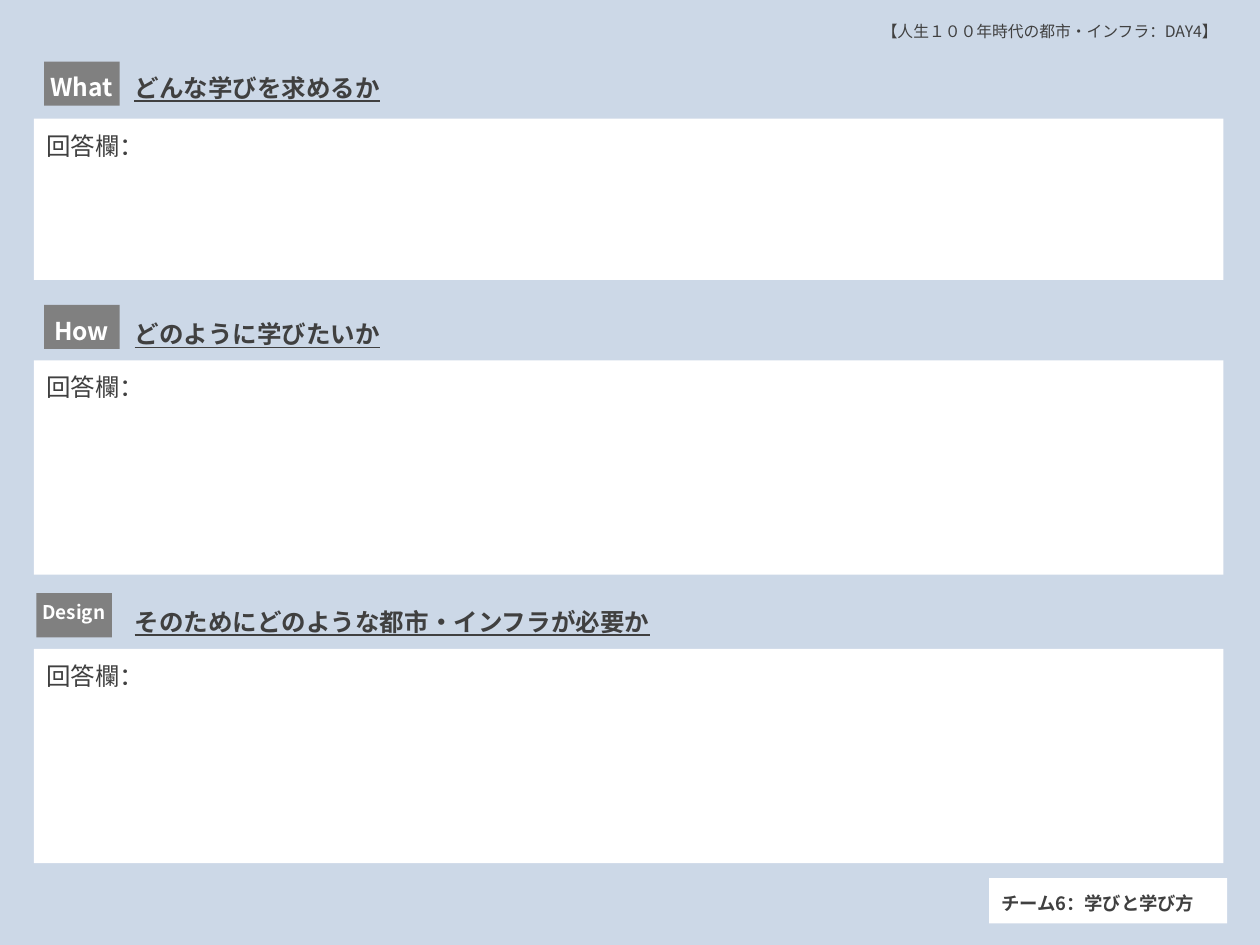
from lxml import etree
from pptx import Presentation
from pptx.dml.color import RGBColor
from pptx.enum import shapes, text
from pptx.oxml.ns import qn
from pptx.util import Pt

FONT = "Noto Sans CJK JP"
COLORS = {"bg": "CCD8E7", "ink": "404040", "badge": "808080", "white": "FFFFFF"}


def add_rect(parent, x, y, w, h, color):
    sp = parent.add_shape(shapes.MSO_SHAPE.RECTANGLE, Pt(x), Pt(y), Pt(w), Pt(h))
    sp.shadow.inherit = False
    sp.fill.solid()
    sp.fill.fore_color.rgb = RGBColor.from_string(COLORS[color])
    sp.line.fill.background()
    return sp


def write(sp, words, size, color="ink", bold=False, underline=False,
          align=text.PP_ALIGN.LEFT, spacing=1.2, anchor=text.MSO_ANCHOR.TOP):
    tf = sp.text_frame
    tf.word_wrap = True
    tf.vertical_anchor = anchor
    p = tf.paragraphs[0]
    p.alignment = align
    p.line_spacing = spacing
    r = p.add_run()
    r.text = words
    r.font.name = FONT
    r.font.size = Pt(size)
    r.font.bold = bold
    r.font.underline = underline
    r.font.color.rgb = RGBColor.from_string(COLORS[color])
    # East Asian typeface, placed right after the Latin one
    ea = etree.Element(qn("a:ea"), typeface=FONT)
    r.font._element.find(qn("a:latin")).addnext(ea)


prs = Presentation()
prs.slide_width, prs.slide_height = Pt(720), Pt(540)
s = prs.slides.add_slide(prs.slide_layouts[6])
s.background.fill.solid()
s.background.fill.fore_color.rgb = RGBColor.from_string(COLORS["bg"])

# Course name at the top right
sp = s.shapes.add_textbox(Pt(496.8), Pt(6.5), Pt(223.2), Pt(26))
write(sp, "【人生１００年時代の都市・インフラ：DAY4】", 9)

# Sections: label, size, spacing, badge x, badge y, label drop,
# question, question y, question width, answer y, answer height
sections = [
    ("What", 14, 1.1, 25.2, 35.2, 0.8,
     "どんな学びを求めるか", 34.6, 403.2, 67.8, 92.2),
    ("How", 14, 1.1, 25.2, 174.2, 1.4,
     "どのように学びたいか", 175.6, 603.4, 206, 122.4),
    ("Design", 10.8, 1.0, 20.8, 339, 0.8,
     "そのためにどのような都市・インフラが必要か", 339.8, 603.4, 370.8, 122.4),
]
for (label, size, spacing, badge_x, badge_y, drop,
     question, question_y, question_w, answer_y, answer_h) in sections:
    # Question
    sp = s.shapes.add_textbox(Pt(69.8), Pt(question_y), Pt(question_w), Pt(32.4))
    write(sp, question, 14, bold=True, underline=True)

    # Answer box
    sp = add_rect(s.shapes, 19.4, answer_y, 679.7, answer_h, "white")
    write(sp, "回答欄：", 14)

    # Badge with its label
    badge = s.shapes.add_group_shape().shapes
    add_rect(badge, badge_x, badge_y, 43.2, 25.2, "badge")
    sp = badge.add_textbox(Pt(badge_x - 5.6), Pt(badge_y + drop), Pt(54), Pt(25.2))
    write(sp, label, size, "white", bold=True,
          align=text.PP_ALIGN.CENTER, spacing=spacing)

# Team name at the bottom right
sp = add_rect(s.shapes, 565.2, 501.8, 136.1, 25.9, "white")
write(sp, "チーム6：学びと学び方", 10.5, bold=True, anchor=text.MSO_ANCHOR.MIDDLE)

prs.save("out.pptx")
